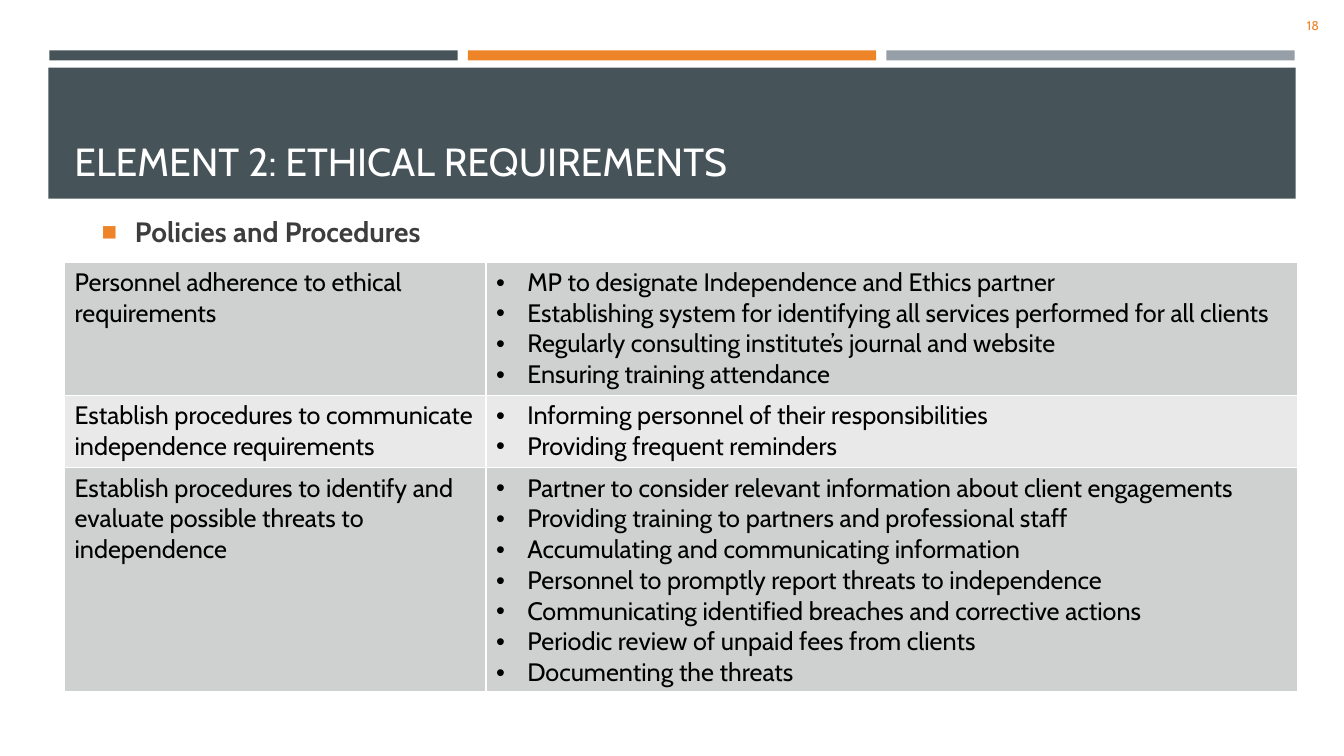
import pptx
import pptx.util
import pptx.dml.color
import pptx.enum.shapes
import pptx.enum.text
import pptx.oxml.ns
import lxml.etree

Inches, Pt = pptx.util.Inches, pptx.util.Pt
RGBColor = pptx.dml.color.RGBColor
ALIGN = pptx.enum.text.PP_ALIGN
ANCHOR = pptx.enum.text.MSO_ANCHOR

SLATE = RGBColor(0x46, 0x53, 0x59)
ORANGE = RGBColor(0xED, 0x84, 0x28)
GREY = RGBColor(0x96, 0x9F, 0xA7)
CHARCOAL = RGBColor(0x3D, 0x3D, 0x3D)
BLACK = RGBColor(0, 0, 0)
WHITE = RGBColor(0xFF, 0xFF, 0xFF)
BANDS = (RGBColor(0xCF, 0xD1, 0xD1), RGBColor(0xE9, 0xE9, 0xEA))
FONT = "Cabin"

TITLE = "ELEMENT 2: ETHICAL REQUIREMENTS"
SUBTITLE = "Policies and Procedures"
PAGE = "18"
POLICIES = [
    (["Personnel adherence to ethical requirements"],
     ["MP to designate Independence and Ethics partner",
      "Establishing system for identifying all services performed for all clients",
      "Regularly consulting institute’s journal and website",
      "Ensuring training attendance"]),
    (["Establish procedures to communicate", "independence requirements"],
     ["Informing personnel of their responsibilities",
      "Providing frequent reminders"]),
    (["Establish procedures to identify and", "evaluate possible threats to", "independence"],
     ["Partner to consider relevant information about client engagements",
      "Providing training to partners and professional staff",
      "Accumulating and communicating information",
      "Personnel to promptly report threats to independence",
      "Communicating identified breaches and corrective actions",
      "Periodic review of unpaid fees from clients",
      "Documenting the threats"]),
]

BAR_LEFT, BAR_TOP, BAR_WIDTH, BAR_HEIGHT, BAR_PITCH = 0.49, 0.5, 4.05, 0.1, 4.15
TABLE_LEFT, TABLE_TOP = 0.64, 2.6
COLUMNS = (4.18, 8.05)
LINE_HEIGHT, CELL_PADDING = 0.3, 0.12


def add_element(parent, tag, **attributes):
    return lxml.etree.SubElement(parent, pptx.oxml.ns.qn(tag), attributes)


def add_bar(slide, box, colour):
    bar = slide.shapes.add_shape(pptx.enum.shapes.MSO_SHAPE.RECTANGLE, *map(Inches, box))
    bar.shadow.inherit = False
    bar.fill.solid()
    bar.fill.fore_color.rgb = colour
    bar.line.fill.background()


def write(frame, lines, size, colour, bold=False, align=ALIGN.LEFT):
    frame.word_wrap = True
    frame.text = "\n".join(lines)
    for paragraph in frame.paragraphs:
        paragraph.alignment = align
        for run in paragraph.runs:
            run.font.name = FONT
            run.font.size = Pt(size)
            run.font.bold = bold
            run.font.color.rgb = colour


def add_text(slide, box, text, size, colour, anchor=ANCHOR.TOP, **style):
    frame = slide.shapes.add_textbox(*map(Inches, box)).text_frame
    frame.vertical_anchor = anchor
    write(frame, [text], size, colour, **style)
    return frame


def set_bullet(paragraph, mark, margin, hang, colour=BLACK, percent=100):
    """Give the paragraph a hanging bullet; margin and hang are in inches."""
    properties = paragraph._p.get_or_add_pPr()
    properties.set("marL", str(Inches(margin)))
    properties.set("indent", str(-Inches(hang)))
    add_element(add_element(properties, "a:buClr"), "a:srgbClr", val=str(colour))
    add_element(properties, "a:buSzPct", val=str(percent * 1000))
    add_element(properties, "a:buFont", typeface="Arial")
    add_element(properties, "a:buChar", char=mark)


def set_borders(cell):
    properties = cell._tc.get_or_add_tcPr()
    for side in ("a:lnL", "a:lnR", "a:lnT", "a:lnB"):
        border = add_element(properties, side, w=str(Pt(1)))
        add_element(add_element(border, "a:solidFill"), "a:srgbClr", val=str(WHITE))


def add_policies(slide):
    heights = [CELL_PADDING + LINE_HEIGHT * len(actions) for _, actions in POLICIES]
    table = slide.shapes.add_table(
        len(POLICIES), len(COLUMNS), Inches(TABLE_LEFT), Inches(TABLE_TOP),
        Inches(sum(COLUMNS)), Inches(sum(heights))).table
    table.first_row = False
    table.horz_banding = False
    for column, width in zip(table.columns, COLUMNS):
        column.width = Inches(width)
    for index, (row, height, policy) in enumerate(zip(table.rows, heights, POLICIES)):
        row.height = Inches(height)
        for cell, lines in zip(row.cells, policy):
            set_borders(cell)
            cell.fill.solid()
            cell.fill.fore_color.rgb = BANDS[index % 2]
            write(cell.text_frame, lines, 18, BLACK)
        for paragraph in row.cells[1].text_frame.paragraphs:
            set_bullet(paragraph, "•", 0.31, 0.31)


def main():
    deck = pptx.Presentation()
    deck.slide_width, deck.slide_height = Inches(13.33), Inches(7.5)
    slide = deck.slides.add_slide(deck.slide_layouts[6])

    for index, colour in enumerate((SLATE, ORANGE, GREY)):
        add_bar(slide, (BAR_LEFT + index * BAR_PITCH, BAR_TOP, BAR_WIDTH, BAR_HEIGHT), colour)
    add_bar(slide, (0.48, 0.67, 12.37, 1.3), SLATE)

    add_text(slide, (0.64, 0.77, 12.06, 1.11), TITLE, 28, WHITE, ANCHOR.BOTTOM)
    subtitle = add_text(slide, (0.55, 2.08, 12.15, 4.02), SUBTITLE, 20, CHARCOAL,
                        bold=True, align=ALIGN.JUSTIFY).paragraphs[0]
    subtitle.space_after = Pt(6)
    set_bullet(subtitle, "■", 0.69, 0.33, ORANGE, 92)
    add_text(slide, (12.03, 0.05, 1.15, 0.4), PAGE, 9, ORANGE, ANCHOR.MIDDLE, align=ALIGN.RIGHT)
    add_policies(slide)

    deck.save("out.pptx")


if __name__ == "__main__":
    main()
